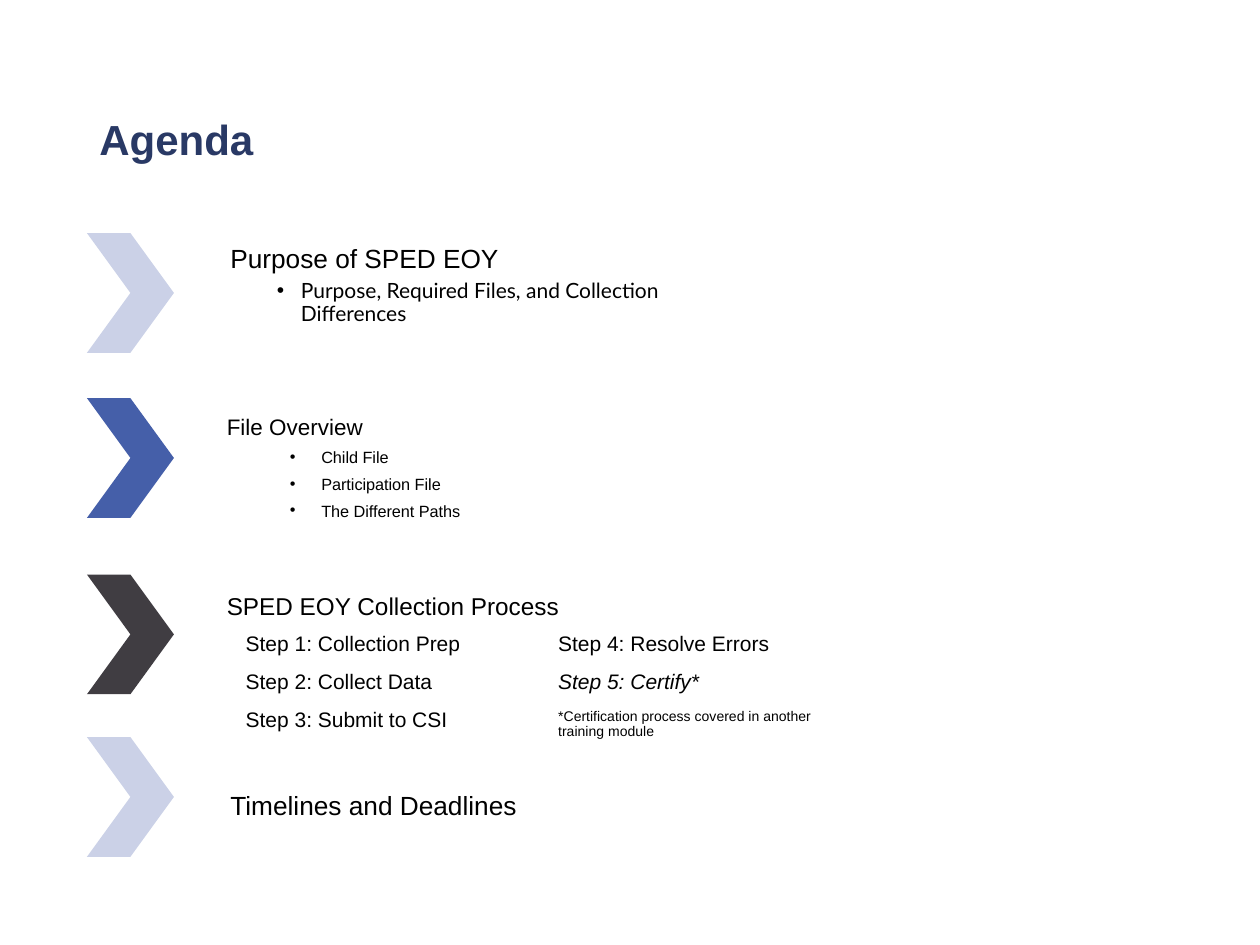
from lxml.etree import SubElement
from pptx import Presentation
from pptx.dml.color import RGBColor
from pptx.enum.shapes import MSO_SHAPE
from pptx.enum.text import MSO_ANCHOR
from pptx.oxml.ns import qn
from pptx.util import Inches, Pt

COLORS = {"title": "293965", "text": "000000", "pale": "CBD1E7",
          "blue": "455FA9", "dark": "403D42"}
NARROW_INSETS = (0.07, 0.04)
DEFAULT_INSETS = (0.1, 0.05)


def set_bullet(paragraph, indent, hanging):
    properties = paragraph._p.get_or_add_pPr()
    properties.set("marL", str(Inches(indent)))
    properties.set("indent", str(-Inches(hanging)))
    SubElement(properties, qn("a:buFont"), typeface="Arial")
    SubElement(properties, qn("a:buChar"), char="•")


def write(paragraph, text, size, color="text", font="Arial", **styles):
    run = paragraph.add_run()
    run.text = text
    formats = {"size": Pt(size), "name": font, **styles}
    for attribute, value in formats.items():
        setattr(run.font, attribute, value)
    run.font.color.rgb = RGBColor.from_string(COLORS[color])


def add_text_frame(slide, box, insets=DEFAULT_INSETS, anchor=MSO_ANCHOR.TOP):
    frame = slide.shapes.add_textbox(*map(Inches, box)).text_frame
    side, edge = map(Inches, insets)
    formats = {"word_wrap": True, "vertical_anchor": anchor,
               "margin_left": side, "margin_right": side,
               "margin_top": edge, "margin_bottom": edge}
    for attribute, value in formats.items():
        setattr(frame, attribute, value)
    return frame


def add_title(slide, box, text):
    heading = add_text_frame(slide, box, anchor=MSO_ANCHOR.MIDDLE).paragraphs[0]
    heading.line_spacing = 0.9
    write(heading, text, 24, "title", bold=True)


def add_chevron(slide, box, color):
    chevron = slide.shapes.add_shape(MSO_SHAPE.CHEVRON, *map(Inches, box))
    chevron.shadow.inherit = False
    chevron.fill.solid()
    chevron.fill.fore_color.rgb = RGBColor.from_string(COLORS[color])
    chevron.line.fill.background()


def add_topic(slide, box, heading, size, spacing=0.9, insets=DEFAULT_INSETS,
              points=(), point_size=12, point_font="Arial", space=7.5,
              indent=0.75, hanging=0.25):
    frame = add_text_frame(slide, box, insets)
    topic = frame.paragraphs[0]
    topic.line_spacing = spacing
    write(topic, heading, size)
    for text in points:
        point = frame.add_paragraph()
        point.level = 1
        point.line_spacing = spacing
        point.space_before = Pt(space)
        set_bullet(point, indent, hanging)
        write(point, text, point_size, font=point_font)


def add_steps(slide, box, column_widths, rows):
    steps = slide.shapes.add_table(len(rows), len(column_widths),
                                   *map(Inches, box)).table
    steps.first_row = steps.horz_banding = False
    for column, width in zip(steps.columns, column_widths):
        column.width = Inches(width)
    for row_index, row in enumerate(rows):
        steps.rows[row_index].height = Inches(box[3] / len(rows))
        for column_index, (text, styles) in enumerate(row):
            cell = steps.cell(row_index, column_index)
            cell.fill.background()
            write(cell.text_frame.paragraphs[0], text, **{"size": 12, **styles})
    # No table style, so that no borders show
    steps._tbl.tblPr.find(qn("a:tableStyleId")).text = \
        "{2D5ABB26-0587-4C30-8999-92F81FD0307C}"


def build_agenda(slide, left, top):
    add_title(slide, (left, top, 8.62, 1.45), "Agenda")

    # Section markers
    for offset, color in ((1.45, "pale"), (2.76, "blue"),
                          (4.16, "dark"), (5.45, "pale")):
        add_chevron(slide, (left, top + offset, 0.69, 0.95), color)

    # Topics beside the markers
    def topic_box(offset, height=0.9):
        return left + 1.04, top + offset, 4.25, height

    add_topic(slide, topic_box(1.5), "Purpose of SPED EOY", 15,
              points=["Purpose, Required Files, and Collection Differences"],
              point_font="Lato", space=3.8, indent=0.56, hanging=0.19)
    add_topic(slide, topic_box(2.9), "File Overview", 12.8, 0.7, NARROW_INSETS,
              points=["Child File", "Participation File", "The Different Paths"],
              point_size=9.3)
    add_topic(slide, topic_box(4.3, 0.27), "SPED EOY Collection Process", 13.9,
              0.8, NARROW_INSETS)
    add_topic(slide, topic_box(5.84), "Timelines and Deadlines", 15)

    # Steps of the collection process
    add_steps(slide, (left + 1.16, top + 4.57, 4.8, 0.9), (2.48, 2.32), [
        [("Step 1: Collection Prep", {}), ("Step 4: Resolve Errors", {})],
        [("Step 2: Collect Data", {}), ("Step 5: Certify*", {"italic": True})],
        [("Step 3: Submit to CSI", {}),
         ("*Certification process covered in another training module",
          {"size": 8})],
    ])


def main():
    deck = Presentation()
    deck.slide_width, deck.slide_height = Inches(10), Inches(7.5)
    slide = deck.slides.add_slide(deck.slide_layouts[6])
    build_agenda(slide, 0.69, 0.4)
    deck.save("out.pptx")


if __name__ == "__main__":
    main()
